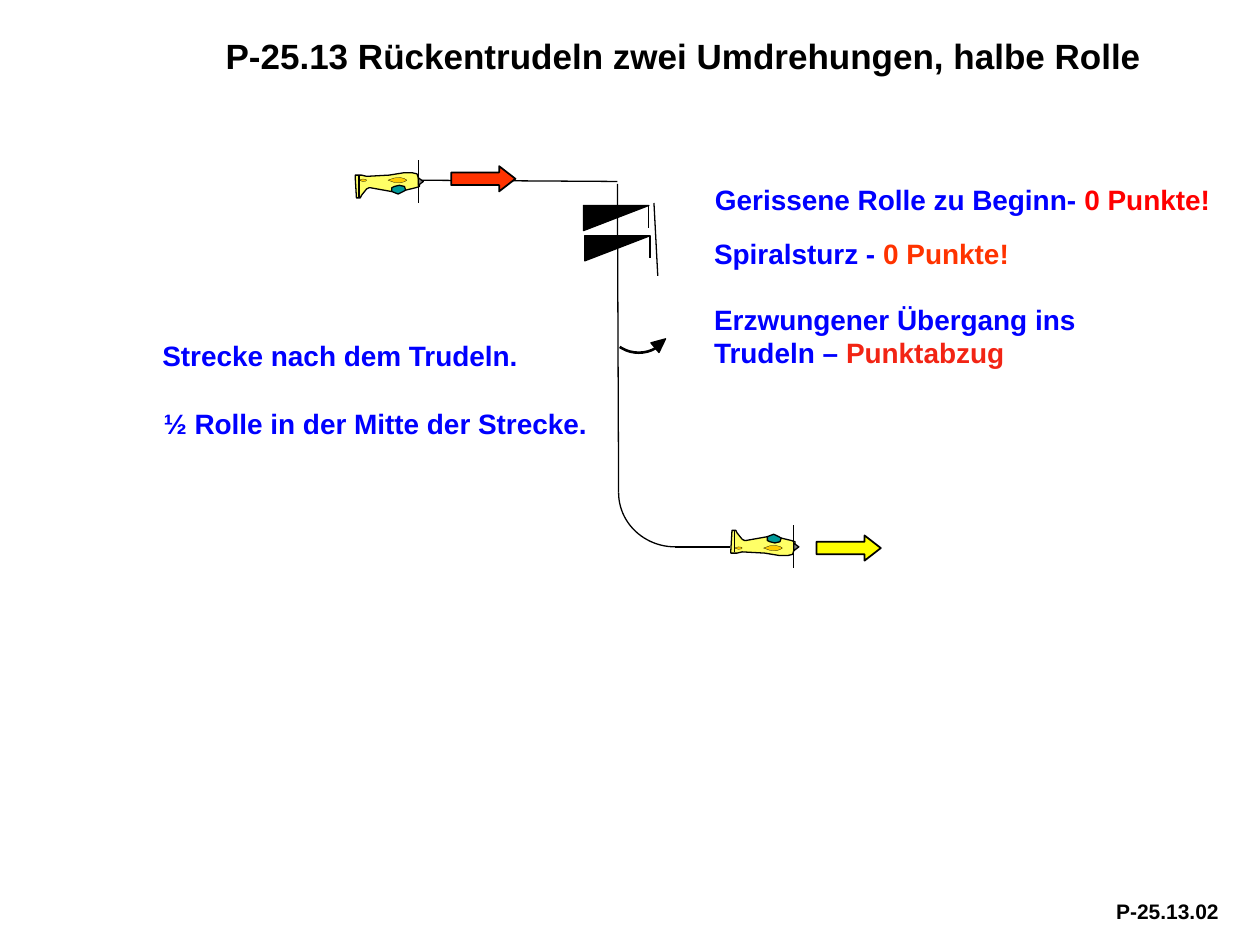
from pptx import Presentation
from pptx.dml.color import RGBColor
from pptx.enum.shapes import MSO_CONNECTOR, MSO_SHAPE
from pptx.enum.text import MSO_ANCHOR, MSO_AUTO_SIZE, PP_ALIGN
from pptx.oxml.ns import qn
from pptx.util import Pt
from lxml import etree

STRAIGHT = MSO_CONNECTOR.STRAIGHT
ARC, TRIANGLE = MSO_SHAPE.ARC, MSO_SHAPE.ISOSCELES_TRIANGLE
RT_TRIANGLE, RIGHT_ARROW = MSO_SHAPE.RIGHT_TRIANGLE, MSO_SHAPE.RIGHT_ARROW
LEFT, CENTER = PP_ALIGN.LEFT, PP_ALIGN.CENTER

COLORS = {
    "black": "000000", "blue": "0000FF", "red": "FF0000", "orange": "FF3300",
    "brick": "F22414", "yellow": "FFFF00", "body": "FFFF66",
    "canopy": "009999", "wing": "FFCC00", "nose": "808080",
}

# Aircraft outlines, from the tail end and the propeller axis, canopy up
BODY = [(28.8, -5), (34.6, -3.6), (36.7, -2.9), (36.7, 0), (36, 2.2), (35.3, 4.3),
        (32.4, 5), (28, 5), (19.4, 3.6), (6.5, 2.9), (3.6, 3.6), (0, 3.6),
        (0, 2.2), (0.7, -9.4), (2.9, -9.4), (3.6, -7.9), (6.5, -4.3), (7.9, -3.6),
        (8.6, -3.6), (20.9, -5.8), (21.6, -3.6), (25.2, -2.9), (27.4, -2.9), (28.1, -4.3)]
CANOPY = [(20.9, -5.8), (20.9, -3.6), (22.3, -2.9), (25.2, -2.2), (28.1, -2.9),
          (28.8, -5), (27.4, -5.8), (24.5, -7.2)]
WING = [(18.7, 0.7), (22.3, -0.6), (25.9, -0.7), (28.1, -0.2), (29.5, 0.7),
        (28.1, 1.6), (25.9, 2.2), (22.3, 2)]
ELEVATOR = [(2.2, 0.7), (4.3, 0), (6, 0.2), (6.5, 0.7), (6, 1.2), (4.3, 1.4)]


def rgb(name):
    return RGBColor.from_string(COLORS[name])


def style(sp, fill, width):
    sp.shadow.inherit = False
    if fill:
        sp.fill.solid()
        sp.fill.fore_color.rgb = rgb(fill)
    else:
        sp.fill.background()
    sp.line.color.rgb = rgb("black")
    sp.line.width = Pt(width)


def add_line(shapes, x1, y1, x2, y2):
    c = shapes.add_connector(STRAIGHT, Pt(x1), Pt(y1), Pt(x2), Pt(y2))
    c.line.color.rgb = rgb("black")
    c.line.width = Pt(0.75)
    etree.SubElement(c._element.spPr, qn("a:effectLst"))


def add_preset(shapes, kind, box, fill=None, width=0.75, rotation=0, adj=()):
    sp = shapes.add_shape(kind, *map(Pt, box))
    style(sp, fill, width)
    sp.rotation = rotation
    for i, value in enumerate(adj):
        sp.adjustments[i] = value


def add_outline(shapes, points, fill, width):
    pts = [(Pt(x), Pt(y)) for x, y in points]
    fb = shapes.build_freeform(*pts[0], scale=1.0)
    fb.add_line_segments(pts[1:], close=True)
    style(fb.convert_to_shape(), fill, width)


def fill_text(tf, runs, size, align=LEFT, spacing=1.0):
    p = tf.paragraphs[0]
    p.alignment = align
    p.line_spacing = spacing
    p.space_before = Pt(0)
    for text, color in runs:
        r = p.add_run()
        r.text = text
        for name, value in {"name": "Arial", "size": Pt(size), "bold": True}.items():
            setattr(r.font, name, value)
        r.font.color.rgb = rgb(color)


def add_text(slide, box, runs, size=16, align=LEFT, spacing=1.0, wrap=True):
    tf = slide.shapes.add_textbox(*map(Pt, box)).text_frame
    tf.word_wrap = wrap
    fill_text(tf, runs, size, align, spacing)


def add_title(slide, box, text):
    sp = slide.shapes.title
    for name, value in zip(("left", "top", "width", "height"), box):
        setattr(sp, name, Pt(value))
    tf = sp.text_frame
    settings = {"margin_left": Pt(6.5), "margin_right": Pt(6.5), "margin_top": Pt(3),
                "margin_bottom": Pt(3), "word_wrap": True,
                "auto_size": MSO_AUTO_SIZE.NONE, "vertical_anchor": MSO_ANCHOR.TOP}
    for name, value in settings.items():
        setattr(tf, name, value)
    fill_text(tf, [(text, "black")], 20, spacing=0.8)


def add_aircraft(slide, x, y, up=1):
    """Aircraft flying right; up=-1 turns it on its back."""
    shapes = slide.shapes.add_group_shape().shapes
    for points, fill, width in ((BODY, "body", 0.75), (CANOPY, "canopy", 0.75),
                                (WING, "wing", 0.13), (ELEVATOR, "wing", 0.13)):
        add_outline(shapes, [(x + dx, y + up * dy) for dx, dy in points], fill, width)
    add_line(shapes, x + 2.2, y + up * 2.9, x + 2.2, y - up * 9.4)
    add_preset(shapes, TRIANGLE, (x + 35.3, y - 1.4, 4.3, 2.9), "nose", rotation=90)
    add_line(shapes, x + 36, y - 12.2, x + 36, y + 12.2)


def add_flight_path(slide, x, y):
    """Entry line, vertical descent, quarter arc and exit line."""
    shapes = slide.shapes
    add_line(shapes, x, y, x + 112.3, y + 0.7)
    add_line(shapes, x + 112.3, y + 2.1, x + 113, y + 178.5)
    add_preset(shapes, ARC, (x + 113, y + 147.6, 64.8, 61.9), adj=(54, 108))
    add_line(shapes, x + 145.4, y + 209.5, x + 176.4, y + 209.5)


def add_spin(slide, x, y):
    """Two spin turns, each a wedge with a tick, beside a bracket line."""
    for turn in range(2):
        left, top = x + turn * 0.7, y + turn * 17.3
        shapes = slide.shapes.add_group_shape().shapes
        add_line(shapes, left + 37.4, top, left + 37.4, top + 13)
        add_preset(shapes, RT_TRIANGLE, (left + 11.5, top - 11.5, 14.4, 37.4),
                   "black", rotation=90)
    add_line(slide.shapes, x + 40.3, y - 1.4, x + 42.5, y + 40.3)


def add_half_roll(slide, x, y):
    shapes = slide.shapes.add_group_shape().shapes
    add_preset(shapes, ARC, (x, y, 38.9, 38.9), width=1.5, adj=(33.6, 74.4))
    add_preset(shapes, TRIANGLE, (x + 28.1, y + 29.5, 7.2, 7.9), "black", rotation=50.2)


def add_direction_arrow(slide, x, y, fill):
    add_preset(slide.shapes, RIGHT_ARROW, (x, y, 36.7, 14.4), fill, 1, adj=(0.5, 0.645))


def main():
    prs = Presentation()
    prs.slide_width, prs.slide_height = Pt(720), Pt(540)
    slide = prs.slides.add_slide(prs.slide_layouts[5])

    # Title and figure number
    add_title(slide, (122.4, 21.6, 597.6, 25.9),
              "P-25.13 Rückentrudeln zwei Umdrehungen, halbe Rolle")
    add_text(slide, (630.7, 512.6, 74.2, 18.7), [("P-25.13.02", "black")],
             size=12, spacing=0.8, wrap=False)

    # Manoeuvre
    add_flight_path(slide, 240.5, 103)
    add_spin(slide, 333.4, 117.4)
    add_half_roll(slide, 345.6, 162.7)
    add_aircraft(slide, 203, 103.7, up=-1)
    add_direction_arrow(slide, 257.8, 95, "orange")
    add_aircraft(slide, 417.6, 312.5)
    add_direction_arrow(slide, 466.6, 306, "yellow")

    # Judging notes
    add_text(slide, (401, 169.2, 282.2, 46.1),
             [("Erzwungener Übergang ins Trudeln – ", "blue"), ("Punktabzug", "brick")])
    add_text(slide, (401, 131.8, 257, 26.6),
             [("Spiralsturz - ", "blue"), ("0 Punkte!", "orange")])
    add_text(slide, (390.2, 100.8, 319.7, 26.6),
             [("Gerissene Rolle zu Beginn- ", "blue"), ("0 Punkte!", "red")], align=CENTER)
    add_text(slide, (85.7, 190.1, 257, 26.6), [("Strecke nach dem Trudeln.", "blue")])
    add_text(slide, (86.4, 229, 263.5, 26.6),
             [("½ Rolle in der Mitte der Strecke.", "blue")])

    prs.save("out.pptx")


if __name__ == "__main__":
    main()
